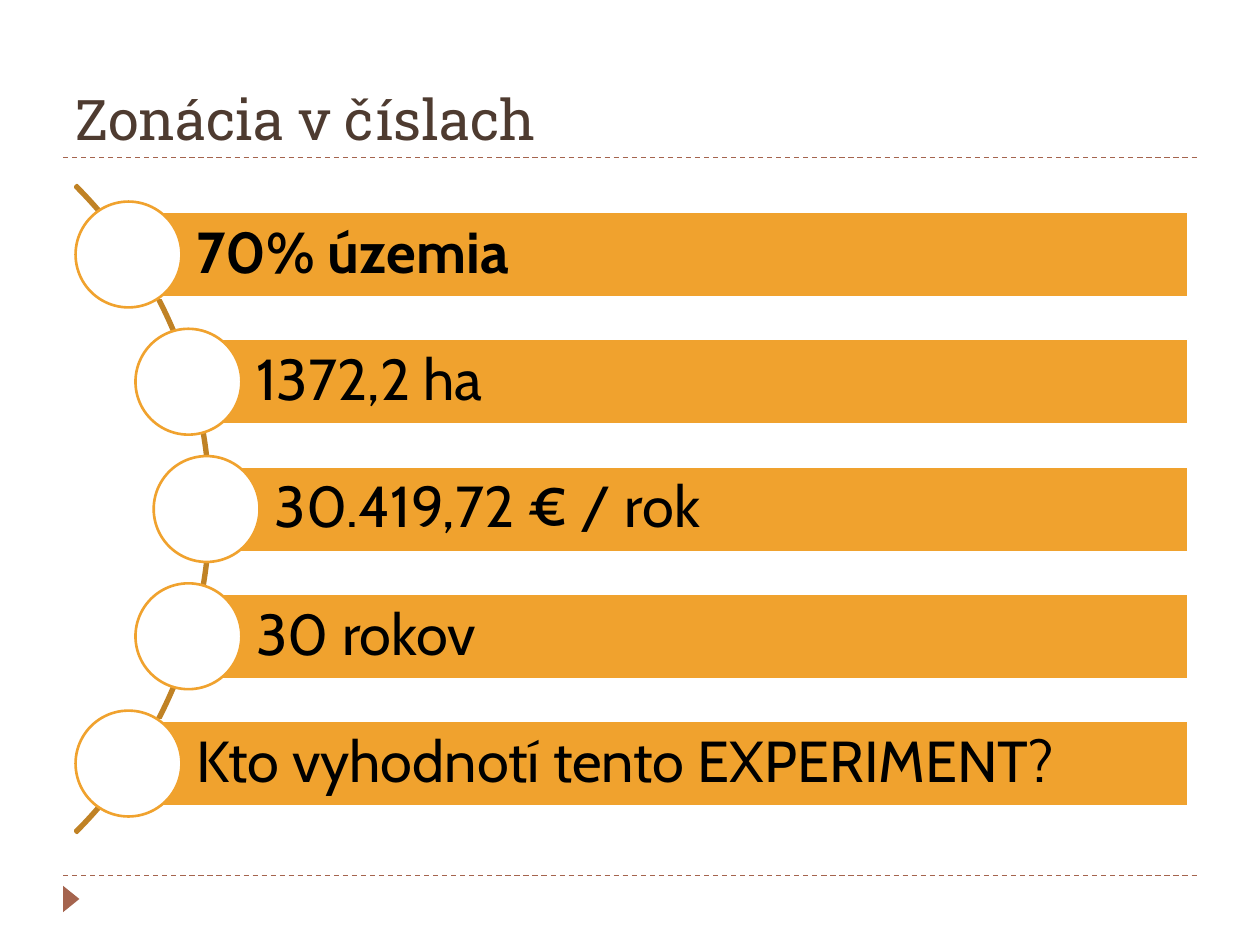
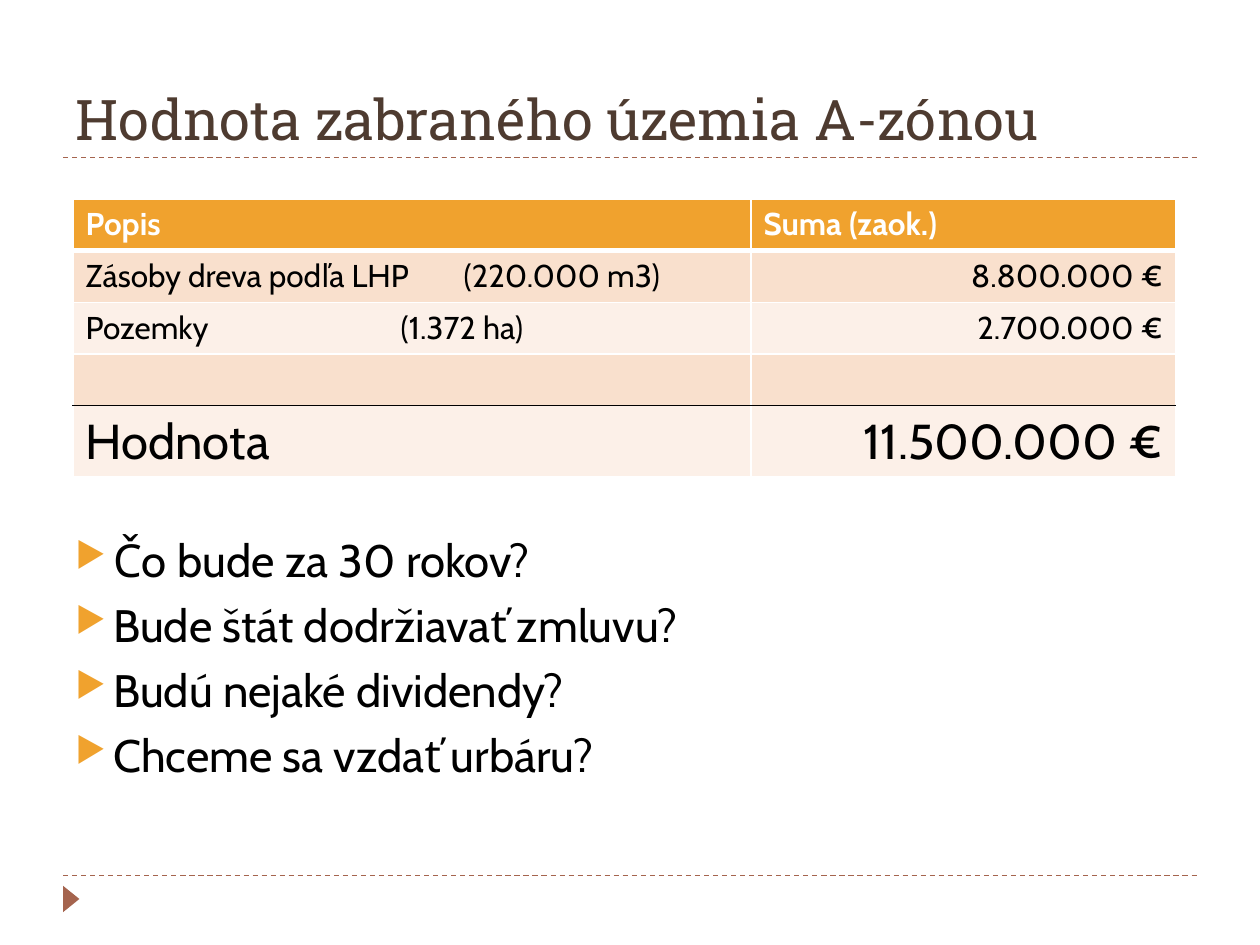
"""Build two slides on zoning: key figures and the value of the land taken."""
import math
from dataclasses import dataclass
from typing import NamedTuple

from lxml import etree
from pptx import Presentation, dml, slide as sl, util as u
from pptx.dml.color import RGBColor
from pptx.enum import dml as ed, shapes, text
from pptx.oxml import ns
from pptx.util import Inches, Pt


@dataclass(frozen=True)
class Theme:
    paper: str = "FFFFFF"
    ink: str = "000000"
    title: str = "4E3B30"
    rule: str = "A5644E"
    gold: str = "F0A22E"
    arc: str = "C08225"
    bands: tuple[str, str] = ("F9E0CD", "FCF0E8")
    head: str = "Roboto Slab"
    body: str = "Cabin"
    title_pt: int = 32
    bar_pt: int = 33
    list_pt: int = 26
    cell_pt: int = 18
    total_pt: int = 28


class Box(NamedTuple):
    left: float
    top: float
    width: float
    height: float

    def emu(self) -> list[u.Length]:
        return [Inches(side) for side in self]


class Fact(NamedTuple):
    label: str
    bold: bool = False


class Row(NamedTuple):
    label: str
    sum: str
    fill: str
    size: int
    height: float = 0.41
    top: tuple[str, int] = ("FFFFFF", 1)
    low: tuple[str, int] = ("FFFFFF", 1)


T = Theme()
FACTS = [
    Fact("70% územia", True),
    Fact("1372,2 ha"),
    Fact("30.419,72 € / rok"),
    Fact("30 rokov"),
    Fact("Kto vyhodnotí tento EXPERIMENT?"),
]
ROWS = [
    Row("Popis", "Suma (zaok.)", T.gold, T.cell_pt, low=(T.paper, 3)),
    Row("Zásoby dreva podľa LHP \t(220.000 m3)", "8.800.000 €",
        T.bands[0], T.cell_pt, top=(T.paper, 3)),
    Row("Pozemky \t\t\t(1.372 ha)", "2.700.000 €", T.bands[1], T.cell_pt),
    Row("", "", T.bands[0], T.cell_pt, low=(T.ink, 1)),
    Row("Hodnota", "11.500.000 €", T.bands[1], T.total_pt, 0.55, top=(T.ink, 1)),
]
ASKS = [
    "Čo bude za 30 rokov?",
    "Bude štát dodržiavať zmluvu?",
    "Budú nejaké dividendy?",
    "Chceme sa vzdať urbáru?",
]


def rgb(code: str) -> RGBColor:
    """Turn a hex code into a colour."""
    return RGBColor.from_string(code)


def write(para, words: str, size: int, color: str, font: str = T.body,
          bold: bool = False) -> None:
    """Add one styled run to a paragraph."""
    run = para.add_run()
    run.text = words
    run.font.name, run.font.size, run.font.bold = font, Pt(size), bold
    run.font.color.rgb = rgb(color)


def shape(slide: sl.Slide, kind: shapes.MSO_SHAPE, box: Box,
          fill: str | None = None, line: str | None = None):
    """Draw a flat preset shape."""
    item = slide.shapes.add_shape(kind, *box.emu())
    item.shadow.inherit = False
    if fill:
        item.fill.solid()
        item.fill.fore_color.rgb = rgb(fill)
    else:
        item.fill.background()
    if line:
        item.line.color.rgb, item.line.width = rgb(line), Pt(1.5)
    else:
        item.line.fill.background()
    return item


def frame(slide: sl.Slide, box: Box, anchor: text.MSO_ANCHOR):
    """Add a wrapping text box and return its frame."""
    body = slide.shapes.add_textbox(*box.emu()).text_frame
    body.word_wrap, body.vertical_anchor = True, anchor
    return body


def rule(slide: sl.Slide, top: float) -> None:
    """Draw a dashed line across the slide."""
    line = slide.shapes.add_connector(
        shapes.MSO_CONNECTOR.STRAIGHT,
        Inches(0.5), Inches(top), Inches(9.5), Inches(top))
    line.line.color.rgb, line.line.width = rgb(T.rule), Pt(0.75)
    line.line.dash_style = ed.MSO_LINE.DASH
    etree.SubElement(line._element.spPr, ns.qn("a:effectLst"))


def page(deck, title: str) -> sl.Slide:
    """Add a blank slide with its rules, marker and title."""
    slide = deck.slides.add_slide(deck.slide_layouts[6])
    for top in (6.95, 1.25):
        rule(slide, top)
    mark = shape(slide, shapes.MSO_SHAPE.ISOSCELES_TRIANGLE,
                 Box(0.46, 7.07, 0.21, 0.13), T.rule)
    mark.rotation = 90
    body = frame(slide, Box(0.5, 0.17, 9, 1.08), text.MSO_ANCHOR.BOTTOM)
    write(body.paragraphs[0], title, T.title_pt, T.title, T.head)
    return slide


def chain(slide: sl.Slide, facts: list[Fact]) -> None:
    """Draw fact bars whose discs follow an arc."""
    hub_x, hub_y, reach, orbit = -1.96, 4.04, 3.635, 3.6
    step, tall, disc, right = 1.01, 0.68, 0.84, 9.43
    arc = shape(slide, shapes.MSO_SHAPE.BLOCK_ARC,
                Box(hub_x - reach, hub_y - reach, 2 * reach, 2 * reach),
                line=T.arc)
    for spot, turn in enumerate((189, 27, 0.003)):
        arc.adjustments[spot] = turn
    for spot, fact in enumerate(facts):
        drop = (spot - (len(facts) - 1) / 2) * step
        x, y = hub_x + math.sqrt(orbit ** 2 - drop ** 2), hub_y + drop
        bar = shape(slide, shapes.MSO_SHAPE.RECTANGLE,
                    Box(x, y - tall / 2, right - x, tall), T.gold, T.paper)
        body = bar.text_frame
        body.word_wrap, body.vertical_anchor = True, text.MSO_ANCHOR.MIDDLE
        body.margin_left = Inches(0.54)
        body.margin_top = body.margin_right = body.margin_bottom = Inches(0.09)
        para = body.paragraphs[0]
        para.alignment, para.line_spacing = text.PP_ALIGN.LEFT, 0.9
        write(para, fact.label, T.bar_pt, T.ink, bold=fact.bold)
        shape(slide, shapes.MSO_SHAPE.OVAL,
              Box(x - disc / 2, y - disc / 2, disc, disc), T.paper, T.gold)


def edge(cell, side: str, color: str, width: int) -> None:
    """Draw one border of a table cell."""
    line = etree.SubElement(cell._tc.get_or_add_tcPr(), ns.qn(f"a:ln{side}"),
                            w=str(Pt(width)))
    fill = etree.SubElement(line, ns.qn("a:solidFill"))
    etree.SubElement(fill, ns.qn("a:srgbClr"), val=color)


def grid(slide: sl.Slide, rows: list[Row]) -> None:
    """Draw the table of sums."""
    box = Box(0.58, 1.58, 8.75, sum(row.height for row in rows))
    table = slide.shapes.add_table(len(rows), 2, *box.emu()).table
    for col, width in zip(table.columns, (5.38, 3.37)):
        col.width = Inches(width)
    for r, row in enumerate(rows):
        table.rows[r].height = Inches(row.height)
        for c, words in enumerate((row.label, row.sum)):
            cell = table.cell(r, c)
            for side, look in zip("LRTB", ((T.paper, 1), (T.paper, 1),
                                           row.top, row.low)):
                edge(cell, side, *look)
            cell.fill.solid()
            cell.fill.fore_color.rgb = rgb(row.fill)
            para = cell.text_frame.paragraphs[0]
            if r and c:
                para.alignment = text.PP_ALIGN.RIGHT
            if words:
                write(para, words, row.size, T.ink if r else T.paper, bold=not r)


def bullet(para) -> None:
    """Give a paragraph a hanging gold arrow."""
    props = para._p.get_or_add_pPr()
    props.set("marL", str(Inches(0.3)))
    props.set("indent", str(-Inches(0.3)))
    tint = etree.SubElement(props, ns.qn("a:buClr"))
    etree.SubElement(tint, ns.qn("a:srgbClr"), val=T.gold)
    etree.SubElement(props, ns.qn("a:buSzPct"), val="76000")
    etree.SubElement(props, ns.qn("a:buChar"), char="▶")


def asks(slide: sl.Slide, lines: list[str]) -> None:
    """List the open questions."""
    body = frame(slide, Box(0.5, 4.17, 9, 2.57), text.MSO_ANCHOR.TOP)
    for spot, words in enumerate(lines):
        para = body.add_paragraph() if spot else body.paragraphs[0]
        para.space_before = Pt(6)
        bullet(para)
        write(para, words, T.list_pt, T.ink)


def main() -> None:
    """Build and save the deck."""
    deck = Presentation()
    deck.slide_width, deck.slide_height = Inches(10), Inches(7.5)
    chain(page(deck, "Zonácia v číslach"), FACTS)
    value = page(deck, "Hodnota zabraného územia A-zónou")
    grid(value, ROWS)
    asks(value, ASKS)
    deck.save("out.pptx")


if __name__ == "__main__":
    main()
